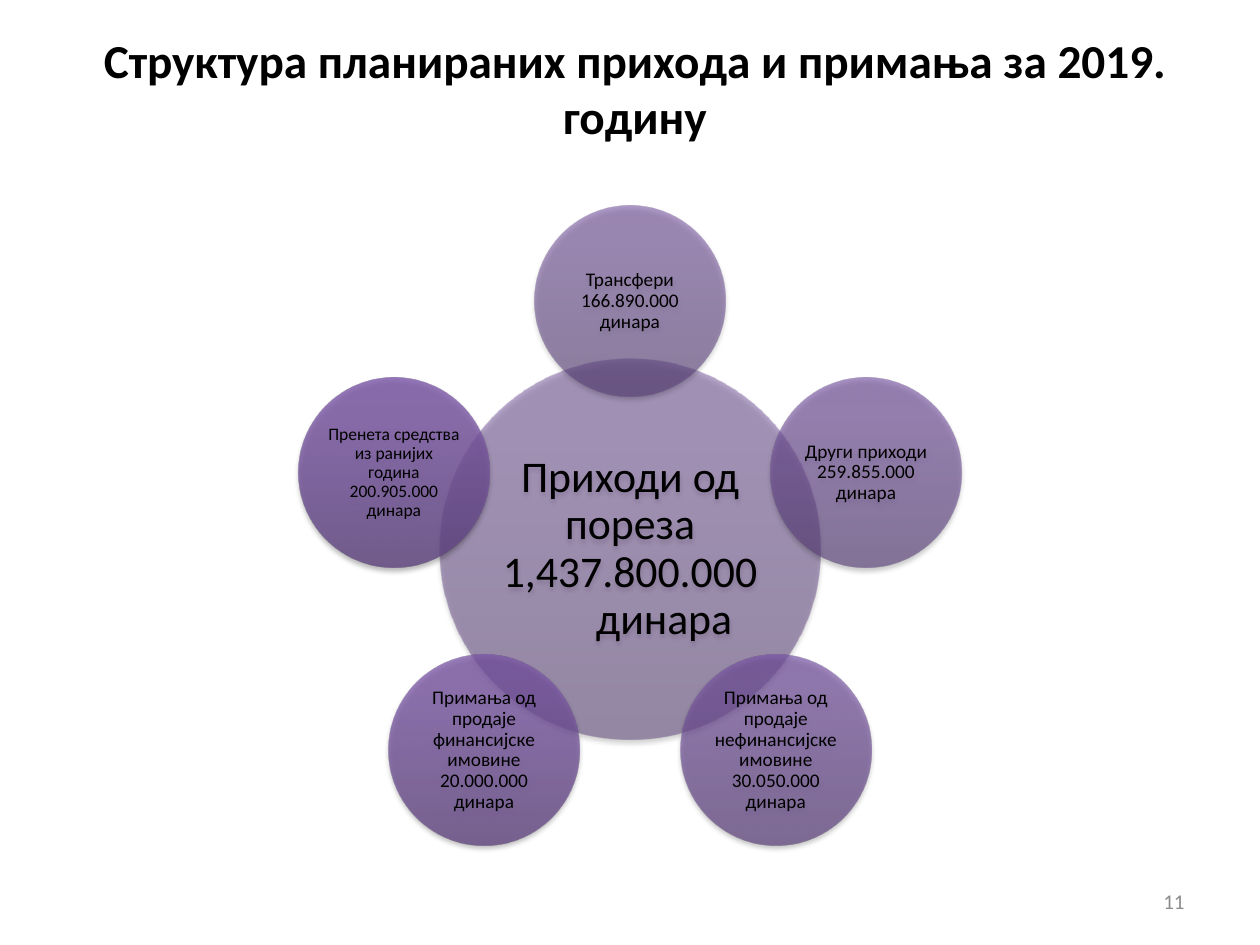
from math import cos, radians, sin

from lxml import etree
from pptx import Presentation
from pptx.dml.color import RGBColor
from pptx.enum.shapes import MSO_SHAPE as Shape
from pptx.enum.text import MSO_ANCHOR as Anchor, PP_ALIGN as Align
from pptx.oxml import parse_xml
from pptx.oxml.ns import qn
from pptx.util import Inches, Pt

FONT = "Calibri"
COLORS = {"text": "000000", "number": "8C8C8C", "shadow": "000000"}
DRAWING_NS = "http://schemas.openxmlformats.org/drawingml/2006/main"

# Ring of circles around the main one
CENTER_X, CENTER_Y = 5, 4.36
RING_RADIUS = 1.97
MAIN_SIZE, SIDE_SIZE = 3.02, 1.51

# Main circle: gradient colours, opacity in percent
MAIN_FILL = ("563D74", "705097", "704F99"), 50

# Clockwise from the top: text, size, inset, gradient colours, opacity
SOURCES = [
    ("Трансфери 166.890.000 динара", 11, 0.02,
     ("583E77", "72519A", "73509C"), 56),
    ("Други приходи 259.855.000 динара", 11, 0.02,
     ("5A407A", "75539E", "7551A0"), 62),
    ("Примања од продаје нефинансијске имовине 30.050.000 динара", 11, 0.02,
     ("5C417C", "7754A1", "7753A4"), 68),
    ("Примања од продаје финансијске имовине 20.000.000 динара", 11, 0.02,
     ("5E427E", "7956A4", "7A55A6"), 74),
    ("Пренета средства из ранијих година 200.905.000 динара", 10, 0.01,
     ("5F4580", "7C59A6", "7C58A8"), 80),
]


def add_run(paragraph, text, size, color="text", bold=False):
    run = paragraph.add_run()
    run.text = text
    run.font.name = FONT
    run.font.size = Pt(size)
    run.font.bold = bold
    run.font.color.rgb = RGBColor.from_string(COLORS[color])


def add_label(slide, box, text, size, align, color="text", bold=False):
    label = slide.shapes.add_textbox(*map(Inches, box))
    frame = label.text_frame
    frame.word_wrap = True
    frame.vertical_anchor = Anchor.MIDDLE
    paragraph = frame.paragraphs[0]
    paragraph.alignment = align
    add_run(paragraph, text, size, color, bold)


def set_gradient(circle, colors, opacity):
    stops = "".join(
        f'<a:gs pos="{position * 1000}"><a:srgbClr val="{color}">'
        f'<a:alpha val="{opacity * 1000}"/></a:srgbClr></a:gs>'
        for position, color in zip((0, 80, 100), colors))
    gradient = parse_xml(
        f'<a:gradFill xmlns:a="{DRAWING_NS}" rotWithShape="1"><a:gsLst>{stops}'
        '</a:gsLst><a:lin ang="16200000" scaled="0"/></a:gradFill>')
    circle._element.spPr.find(qn("a:prstGeom")).addnext(gradient)


def set_shadow(circle):
    circle.shadow.inherit = False
    effects = circle._element.spPr.find(qn("a:effectLst"))
    shadow = etree.SubElement(
        effects, qn("a:outerShdw"), blurRad=str(Pt(3.1)), dist=str(Pt(1.8)),
        dir="5400000", rotWithShape="0")
    color = etree.SubElement(shadow, qn("a:srgbClr"), val=COLORS["shadow"])
    etree.SubElement(color, qn("a:alpha"), val="35000")


def add_circle(slide, x, y, diameter, lines, size, inset, colors, opacity):
    circle = slide.shapes.add_shape(
        Shape.OVAL, Inches(x - diameter / 2), Inches(y - diameter / 2),
        Inches(diameter), Inches(diameter))
    circle.line.fill.background()
    set_gradient(circle, colors, opacity)
    set_shadow(circle)

    frame = circle.text_frame
    frame.word_wrap = True
    frame.vertical_anchor = Anchor.MIDDLE
    frame.margin_left = frame.margin_right = Inches(inset)
    frame.margin_top = frame.margin_bottom = Inches(inset)
    for index, (text, indent) in enumerate(lines):
        paragraph = frame.add_paragraph() if index else frame.paragraphs[0]
        paragraph.alignment = Align.CENTER
        paragraph.line_spacing = 0.9
        if indent:
            paragraph._p.get_or_add_pPr().set("marL", str(Inches(indent)))
        add_run(paragraph, text, size)


def main():
    prs = Presentation()
    prs.slide_width, prs.slide_height = Inches(10), Inches(7.5)
    slide = prs.slides.add_slide(prs.slide_layouts[6])

    # Title and slide number
    add_label(slide, (0.54, 0.27, 9, 0.85),
              "Структура планираних прихода и примања за 2019. годину",
              27, Align.CENTER, bold=True)
    add_label(slide, (7.17, 6.95, 2.33, 0.4), "11", 12, Align.RIGHT, "number")

    # Tax revenue in the middle, its last line set off to the right
    tax_lines = [("Приходи од пореза 1,437.800.000", 0), ("динара", 0.54)]
    add_circle(slide, CENTER_X, CENTER_Y, MAIN_SIZE, tax_lines, 25, 0.03,
               *MAIN_FILL)

    # Other sources at equal angles around it
    for index, (text, size, inset, colors, opacity) in enumerate(SOURCES):
        angle = radians(index * 360 / len(SOURCES) - 90)
        add_circle(slide, CENTER_X + RING_RADIUS * cos(angle),
                   CENTER_Y + RING_RADIUS * sin(angle), SIDE_SIZE,
                   [(text, 0)], size, inset, colors, opacity)

    prs.save("out.pptx")


if __name__ == "__main__":
    main()
